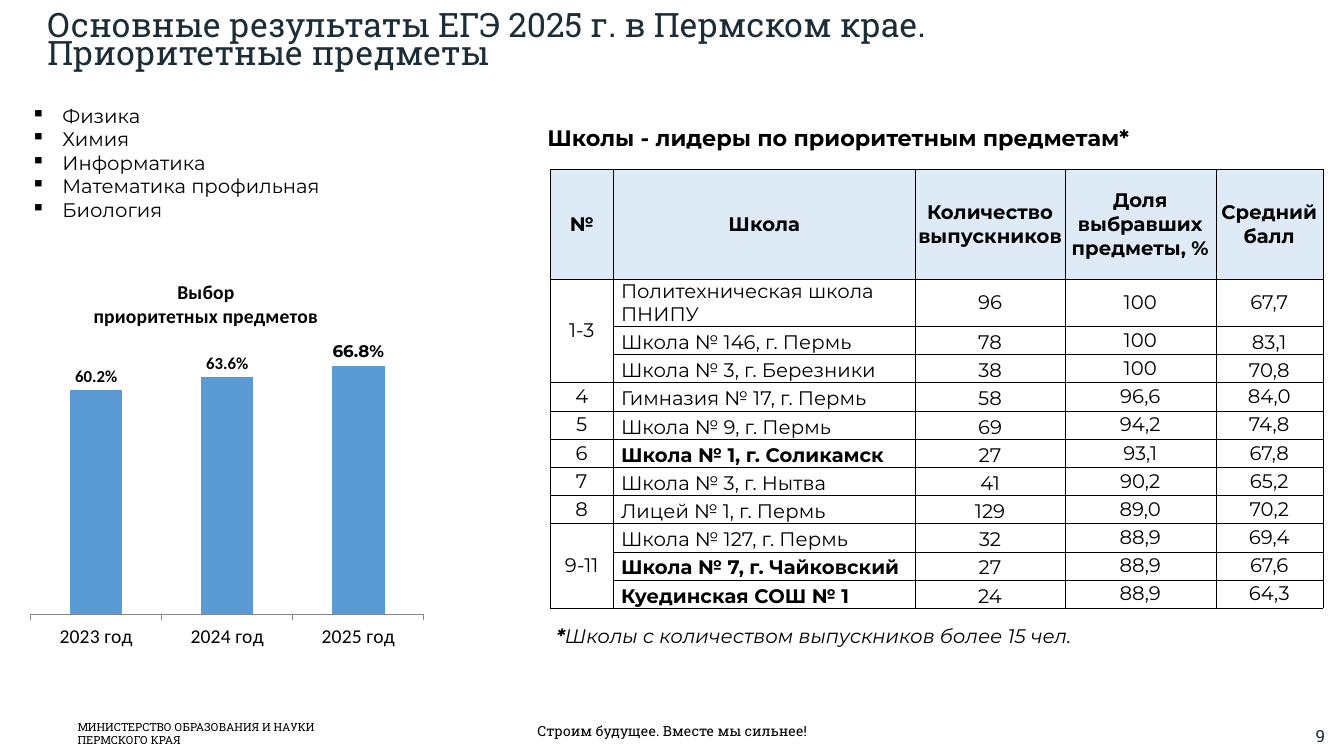
"""Build the slide on exam results in priority subjects."""
import dataclasses
import typing

import lxml.etree
import pptx
import pptx.chart.data
import pptx.dml.color
import pptx.enum.chart
import pptx.enum.text
import pptx.oxml
import pptx.oxml.ns
import pptx.util

WIDE, HIGH = 13.33, 7.5
SLAB, MONT, CAL = "Roboto Slab", "Montserrat", "Calibri"
INK, BLACK, PALE, BLUE, GREY = "1C2D38", "000000", "DEEBF7", "5B9BD5", "868686"
ALIGN = pptx.enum.text.PP_ALIGN
ANCHOR = pptx.enum.text.MSO_ANCHOR
QN = pptx.oxml.ns.qn


@dataclasses.dataclass(frozen=True)
class Style:
    face: str
    size: float
    tint: str = BLACK
    bold: bool = False
    slant: bool = False


@dataclasses.dataclass(frozen=True)
class Box:
    left: float
    top: float
    width: float
    height: float
    lines: tuple[str, ...]
    style: Style
    align: ALIGN = ALIGN.LEFT
    anchor: ANCHOR = ANCHOR.TOP
    space: typing.Any = None
    mark: str = ""
    lead: str = ""


@dataclasses.dataclass(frozen=True)
class School:
    place: str
    name: str
    count: str
    share: str
    score: str
    bold: bool = False
    span: int = 1


CELL = Style(MONT, 14)
HEAD = Style(MONT, 14, bold=True)
LABEL = Style(CAL, 12, bold=True)

BOXES = (
    Box(94.9, 95.33, 4.43, 4, ("9",), Style(SLAB, 12, INK), ALIGN.RIGHT),
    Box(5.03, 94.67, 20.7, 4.93, ("МИНИСТЕРСТВО ОБРАЗОВАНИЯ И НАУКИ ПЕРМСКОГО КРАЯ",),
        Style(SLAB, 8), anchor=ANCHOR.MIDDLE, space=0.9),
    Box(2.78, 0.67, 94.52, 10.4,
        ("Основные результаты ЕГЭ 2025 г. в Пермском крае.\nПриоритетные предметы",),
        Style(SLAB, 24, INK), anchor=ANCHOR.MIDDLE, space=pptx.util.Pt(20)),
    Box(26.71, 93.87, 46.59, 5.87, ("Строим будущее. Вместе мы сильнее!",),
        Style(SLAB, 10), ALIGN.CENTER, ANCHOR.MIDDLE, 0.9),
    Box(40, 15.73, 47.94, 5.87, ("Школы - лидеры по приоритетным предметам*",),
        Style(MONT, 16, bold=True)),
    Box(40.66, 81.87, 57.69, 4.53, ("Школы с количеством выпускников более 15 чел.",),
        Style(MONT, 14, slant=True), lead="*"),
    Box(1.58, 13.07, 35.11, 17.07,
        ("Физика", "Химия", "Информатика", "Математика профильная", "Биология"),
        CELL, mark="▪"),
)

COLS = (4.65, 22.51, 11.1, 11.25, 7.95)
TITLES = ("№", "Школа", "Количество выпускников", "Доля выбравших предметы, %", "Средний балл")
SCHOOLS = (
    School("1-3", "Политехническая школа ПНИПУ", "96", "100", "67,7", span=3),
    School("", "Школа № 146, г. Пермь", "78", "100", "83,1"),
    School("", "Школа № 3, г. Березники", "38", "100", "70,8"),
    School("4", "Гимназия № 17, г. Пермь", "58", "96,6", "84,0"),
    School("5", "Школа № 9, г. Пермь", "69", "94,2", "74,8"),
    School("6", "Школа № 1, г. Соликамск", "27", "93,1", "67,8", bold=True),
    School("7", "Школа № 3, г. Нытва", "41", "90,2", "65,2"),
    School("8", "Лицей № 1, г. Пермь", "129", "89,0", "70,2"),
    School("9-11", "Школа № 127, г. Пермь", "32", "88,9", "69,4", span=3),
    School("", "Школа № 7, г. Чайковский", "27", "88,9", "67,6", bold=True),
    School("", "Куединская СОШ № 1", "24", "88,9", "64,3", bold=True),
)


def across(share: float) -> int:
    return pptx.util.Inches(WIDE * share / 100)


def down(share: float) -> int:
    return pptx.util.Inches(HIGH * share / 100)


def tint(code: str) -> pptx.dml.color.RGBColor:
    return pptx.dml.color.RGBColor.from_string(code)


def dress(font: typing.Any, style: Style) -> None:
    font.name, font.size = style.face, pptx.util.Pt(style.size)
    font.bold, font.italic = style.bold, style.slant
    font.color.rgb = tint(style.tint)


def write(para: typing.Any, text: str, style: Style) -> None:
    for i, part in enumerate(text.split("\n")):
        if i:
            para.add_line_break()
        run = para.add_run()
        run.text = part
        dress(run.font, style)


def draw_box(slide: typing.Any, box: Box) -> None:
    shape = slide.shapes.add_textbox(
        across(box.left), down(box.top), across(box.width), down(box.height))
    frame = shape.text_frame
    frame.word_wrap, frame.vertical_anchor = True, box.anchor
    for i, line in enumerate(box.lines):
        para = frame.add_paragraph() if i else frame.paragraphs[0]
        para.alignment = box.align
        if box.space:
            para.line_spacing = box.space
        if box.mark:
            props = para._p.get_or_add_pPr()
            inset = pptx.util.Inches(0.31)
            props.set("marL", str(inset))
            props.set("indent", str(-inset))
            lxml.etree.SubElement(props, QN("a:buChar")).set("char", box.mark)
        if box.lead:
            write(para, box.lead, dataclasses.replace(box.style, bold=True))
        write(para, line, box.style)


def edge(cell: typing.Any) -> None:
    props = cell._tc.get_or_add_tcPr()
    for side in ("lnL", "lnR", "lnT", "lnB"):
        line = lxml.etree.SubElement(props, QN(f"a:{side}"), w=str(pptx.util.Pt(0.25)))
        fill = lxml.etree.SubElement(line, QN("a:solidFill"))
        lxml.etree.SubElement(fill, QN("a:srgbClr"), val=BLACK)


def draw_table(slide: typing.Any) -> None:
    rows = [TITLES] + [(s.place, s.name, s.count, s.share, s.score) for s in SCHOOLS]
    highs = [14.53] + [3.73] * len(SCHOOLS)
    table = slide.shapes.add_table(
        len(rows), len(COLS), across(40.96), down(22.4),
        across(sum(COLS)), down(sum(highs))).table
    table.first_row = table.horz_banding = False
    for col, width in zip(table.columns, COLS):
        col.width = across(width)
    for r, texts in enumerate(rows):
        table.rows[r].height = down(highs[r])
        for c, text in enumerate(texts):
            cell = table.cell(r, c)
            low = r > 1 and (c in (1, 2) or (c == 4 and r < 4))
            cell.vertical_anchor = ANCHOR.BOTTOM if low else ANCHOR.MIDDLE
            cell.margin_left = cell.margin_right = pptx.util.Inches(0.08 if r else 0)
            cell.margin_top = pptx.util.Inches(0.01 if low else 0)
            cell.margin_bottom = 0
            edge(cell)
            if r:
                cell.fill.background()
            else:
                cell.fill.solid()
                cell.fill.fore_color.rgb = tint(PALE)
            para = cell.text_frame.paragraphs[0]
            para.alignment = ALIGN.LEFT if r and c == 1 else ALIGN.CENTER
            strong = not r or (c == 1 and SCHOOLS[r - 1].bold)
            if text:
                write(para, text, HEAD if strong else CELL)
            else:
                para.font.size = pptx.util.Pt(CELL.size)
    for r, school in enumerate(SCHOOLS, 1):
        if school.span > 1:
            table.cell(r, 0).merge(table.cell(r + school.span - 1, 0))


def lay_out(part: typing.Any, spot: int, **values: typing.Any) -> None:
    for old in part.findall(QN("c:layout")):
        part.remove(old)
    layout = lxml.etree.Element(QN("c:layout"))
    manual = lxml.etree.SubElement(layout, QN("c:manualLayout"))
    for name, value in values.items():
        lxml.etree.SubElement(manual, QN(f"c:{name}")).set("val", str(value))
    part.insert(spot, layout)


def draw_chart(slide: typing.Any) -> None:
    data = pptx.chart.data.CategoryChartData(number_format="0.0%")
    data.categories = ["2023 год", "2024 год", "2025 год"]
    data.add_series("Series 1", (0.602, 0.636, 0.668))
    chart = slide.shapes.add_chart(
        pptx.enum.chart.XL_CHART_TYPE.COLUMN_CLUSTERED,
        across(2.25), down(32), across(29.71), down(55.07), data).chart
    dress(chart.font, Style(CAL, 18))
    chart.has_legend = False
    title = chart.chart_title
    frame = title.text_frame
    write(frame.paragraphs[0], "Выбор", Style(CAL, 14, bold=True))
    write(frame.add_paragraph(), "приоритетных предметов", Style(CAL, 14, bold=True))
    title.include_in_layout = False
    lay_out(title._element, 1, xMode="edge", yMode="edge", x=0.15, y=0.08)
    lay_out(chart._chartSpace.chart.plotArea, 0, layoutTarget="inner",
            xMode="edge", yMode="edge", x=0, y=0, w=0.986, h=0.895)
    value, cat = chart.value_axis, chart.category_axis
    value.minimum_scale, value.maximum_scale = 0, 1
    value.has_major_gridlines = value.visible = False
    dress(cat.tick_labels.font, Style(CAL, 14))
    cat.major_tick_mark = pptx.enum.chart.XL_TICK_MARK.OUTSIDE
    cat.format.line.color.rgb = tint(GREY)
    plot = chart.plots[0]
    plot.gap_width, plot.vary_by_categories = 150, False
    bars = plot.series[0]
    bars.format.fill.solid()
    bars.format.fill.fore_color.rgb = tint(BLUE)
    labels = bars.data_labels
    labels.show_value = True
    labels.number_format, labels.number_format_is_linked = "0.0%", False
    labels.position = pptx.enum.chart.XL_LABEL_POSITION.OUTSIDE_END
    dress(labels.font, LABEL)
    last = bars.points[2].data_label
    write(last.text_frame.paragraphs[0], "66.8%", Style(MONT, 12, bold=True))
    last.position = labels.position


def main() -> None:
    deck = pptx.Presentation()
    deck.slide_width, deck.slide_height = across(100), down(100)
    slide = deck.slides.add_slide(deck.slide_layouts[6])
    for box in BOXES:
        draw_box(slide, box)
    draw_table(slide)
    draw_chart(slide)
    deck.save("out.pptx")


if __name__ == "__main__":
    main()
